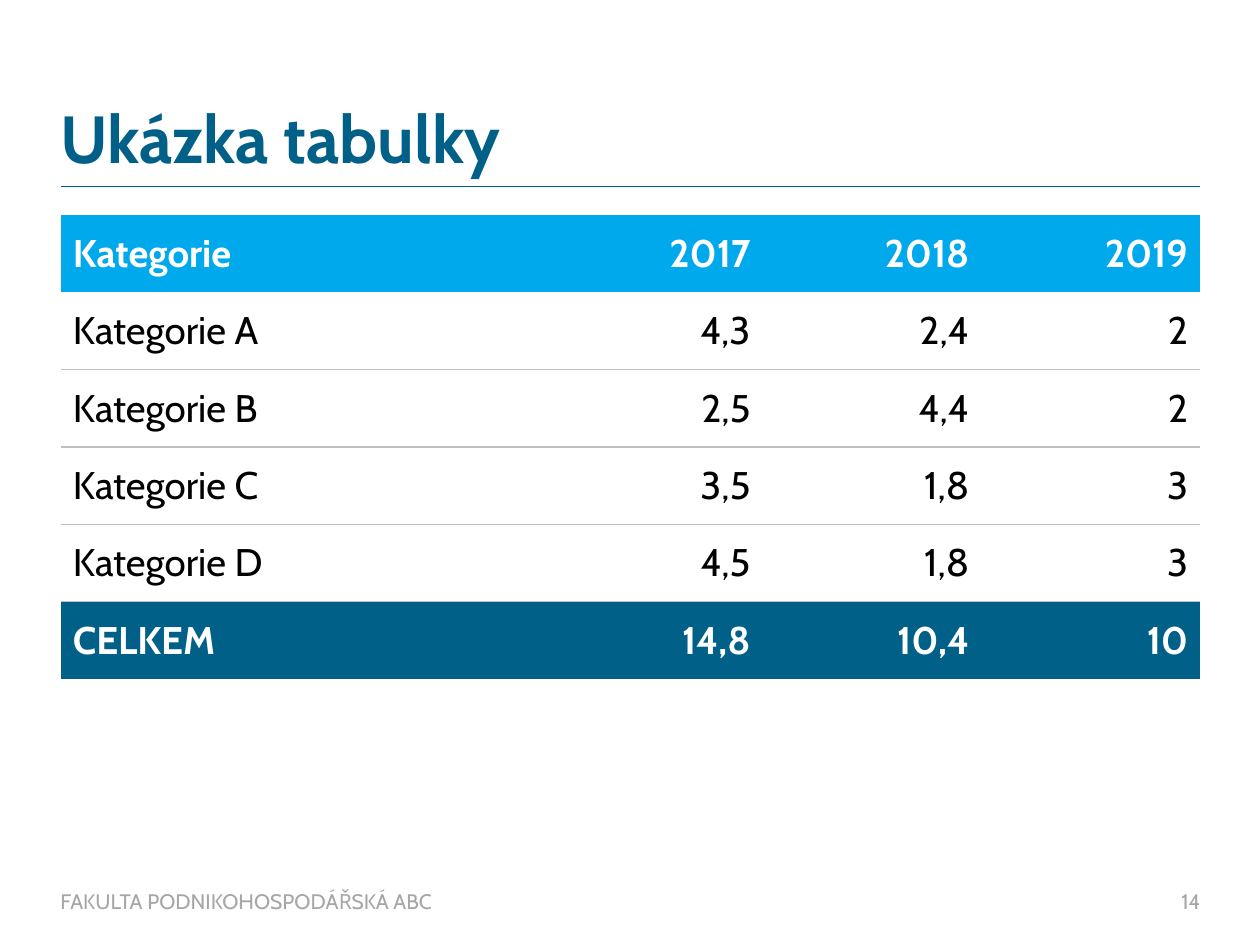
import dataclasses

import lxml.etree
import pptx
import pptx.dml.color
import pptx.enum.shapes
import pptx.enum.text
import pptx.oxml.ns
import pptx.util

Cm = pptx.util.Cm
Pt = pptx.util.Pt
ALIGN = pptx.enum.text.PP_ALIGN
ANCHOR = pptx.enum.text.MSO_ANCHOR


@dataclasses.dataclass(frozen=True)
class Theme:
    """Colours, font and type sizes of the slide."""
    font: str = "Cabin"
    navy: str = "006088"
    sky: str = "00A8EC"
    white: str = "FFFFFF"
    black: str = "000000"
    rule: str = "BFBFBF"
    muted: str = "A6A6A6"
    title: int = 38
    body: int = 22
    footer: int = 12


THEME = Theme()
LEFT, RIGHT = 1.22, 24.2
WIDTH = RIGHT - LEFT
ROW_HEIGHT = 1.56
COLUMNS = [9.75, 4.41, 4.41, 4.41]
NO_STYLE = "{2D5ABB26-0587-4C30-8999-92F81FD0307C}"
ROWS = [
    ["Kategorie", "2017", "2018", "2019"],
    ["Kategorie A", "4,3", "2,4", "2"],
    ["Kategorie B", "2,5", "4,4", "2"],
    ["Kategorie C", "3,5", "1,8", "3"],
    ["Kategorie D", "4,5", "1,8", "3"],
    ["CELKEM", "14,8", "10,4", "10"],
]


def rgb(value):
    """Return the colour object for a hex value."""
    return pptx.dml.color.RGBColor.from_string(value)


def add_run(p, text, size, color, bold=False):
    """Add one formatted run to a paragraph."""
    r = p.add_run()
    r.text = text
    r.font.name = THEME.font
    r.font.size = Pt(size)
    r.font.bold = bold
    r.font.color.rgb = rgb(color)


def add_text(s, box, text, size, color, bold=False, align=ALIGN.LEFT,
             anchor=ANCHOR.MIDDLE, spacing=1.0):
    """Add a text box without insets."""
    tf = s.shapes.add_textbox(*map(Cm, box)).text_frame
    tf.word_wrap = True
    tf.margin_left = tf.margin_right = tf.margin_top = tf.margin_bottom = 0
    tf.vertical_anchor = anchor
    p = tf.paragraphs[0]
    p.alignment = align
    p.line_spacing = spacing
    add_run(p, text, size, color, bold)


def add_rule(s, y):
    """Add the thin line under the title."""
    sp = s.shapes.add_connector(pptx.enum.shapes.MSO_CONNECTOR.STRAIGHT,
                                Cm(LEFT), Cm(y), Cm(RIGHT), Cm(y))
    sp.line.color.rgb = rgb(THEME.navy)
    sp.line.width = Pt(0.25)
    lxml.etree.SubElement(sp._element.spPr, pptx.oxml.ns.qn("a:effectLst"))


def add_border(cell, side):
    """Draw a grey border on one side of a cell."""
    qn = pptx.oxml.ns.qn
    ln = lxml.etree.SubElement(cell._tc.get_or_add_tcPr(), qn("a:ln" + side), w=str(Pt(1)))
    fill = lxml.etree.SubElement(ln, qn("a:solidFill"))
    lxml.etree.SubElement(fill, qn("a:srgbClr"), val=THEME.rule)


def fill_cell(cell, text, align, fill, sides):
    """Set the text, borders and fill of a cell."""
    cell.vertical_anchor = ANCHOR.MIDDLE
    cell.margin_left = cell.margin_right = Cm(0.25)
    cell.margin_top = cell.margin_bottom = Cm(0.18)
    p = cell.text_frame.paragraphs[0]
    p.alignment = align
    add_run(p, text, THEME.body, THEME.white if fill else THEME.black, bool(fill))
    for side in sides:
        add_border(cell, side)
    if fill:
        cell.fill.solid()
        cell.fill.fore_color.rgb = rgb(fill)
    else:
        cell.fill.background()


def add_table(s, top):
    """Add the table with header, ruled body rows and total."""
    last = len(ROWS) - 1
    tbl = s.shapes.add_table(len(ROWS), len(COLUMNS), Cm(LEFT), Cm(top),
                             Cm(WIDTH), Cm(ROW_HEIGHT * len(ROWS))).table
    tbl.horz_banding = False
    tbl._tbl.tblPr.find(pptx.oxml.ns.qn("a:tableStyleId")).text = NO_STYLE
    for column, width in zip(tbl.columns, COLUMNS):
        column.width = Cm(width)
    fills = {0: THEME.sky, last: THEME.navy}
    for i, row in enumerate(ROWS):
        tbl.rows[i].height = Cm(ROW_HEIGHT)
        sides = ("T" if 1 < i < last else "") + ("B" if 0 < i < last - 1 else "")
        for j, text in enumerate(row):
            align = ALIGN.RIGHT if j else ALIGN.LEFT
            fill_cell(tbl.cell(i, j), text, align, fills.get(i), sides)


def main():
    """Build the slide and save it."""
    prs = pptx.Presentation()
    prs.slide_width, prs.slide_height = Cm(25.4), Cm(19.05)
    s = prs.slides.add_slide(prs.slide_layouts[6])
    add_rule(s, 3.76)
    add_text(s, (LEFT, 2.11, WIDTH, 1.47), "Ukázka tabulky", THEME.title,
             THEME.navy, bold=True, anchor=ANCHOR.BOTTOM, spacing=0.9)
    add_table(s, 4.33)
    add_text(s, (LEFT, 17.91, 19.43, 0.51), "FAKULTA PODNIKOHOSPODÁŘSKÁ ABC",
             THEME.footer, THEME.muted)
    add_text(s, (23.24, 17.91, 0.96, 0.51), "14", THEME.footer, THEME.muted,
             align=ALIGN.RIGHT)
    prs.save("out.pptx")


if __name__ == "__main__":
    main()
